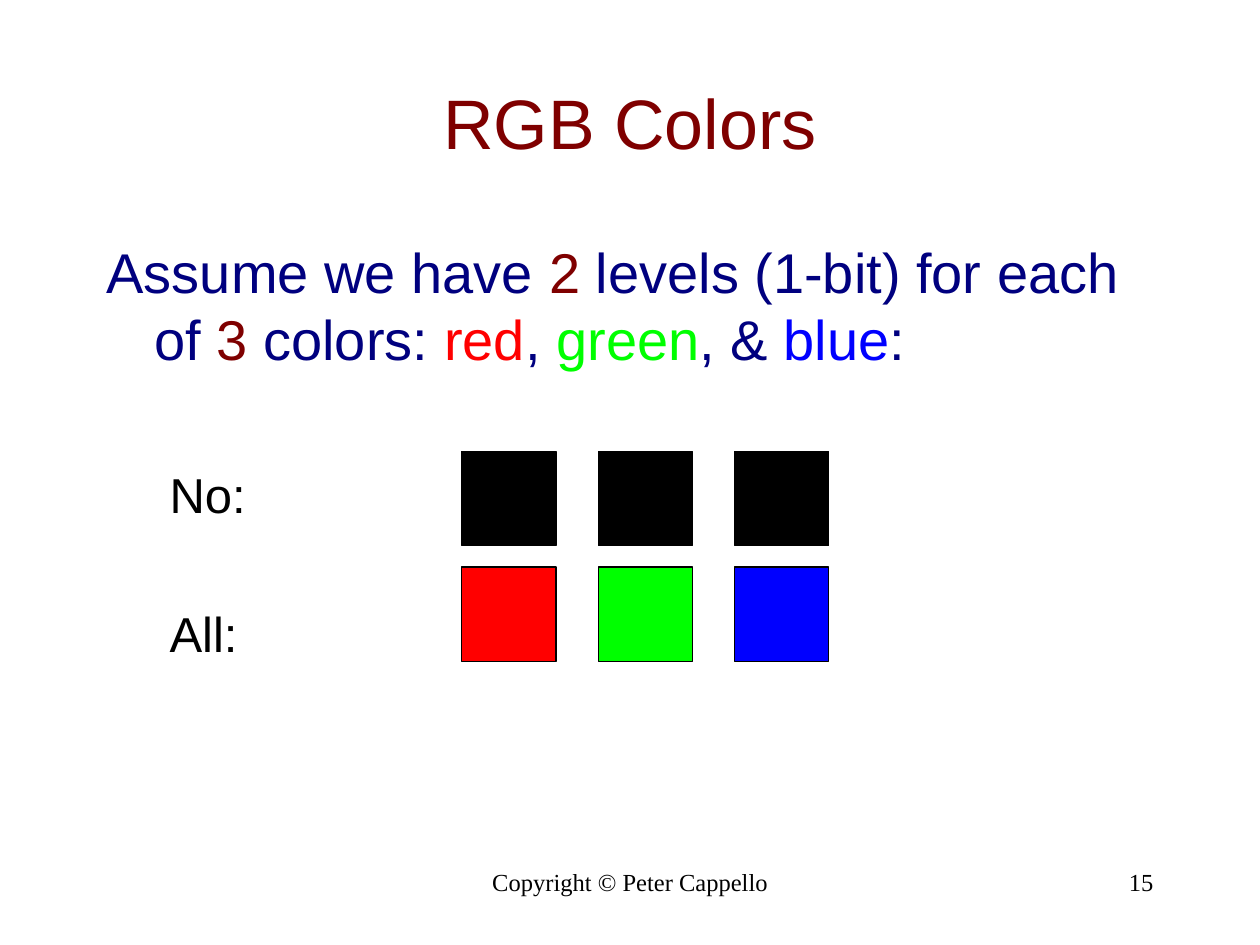
from pptx import Presentation
from pptx.dml.color import RGBColor
from pptx.enum.shapes import MSO_SHAPE
from pptx.enum.text import MSO_ANCHOR, PP_ALIGN
from pptx.util import Cm, Pt

RECT = MSO_SHAPE.RECTANGLE
TOP, MIDDLE = MSO_ANCHOR.TOP, MSO_ANCHOR.MIDDLE
LEFT, CENTER, RIGHT = PP_ALIGN.LEFT, PP_ALIGN.CENTER, PP_ALIGN.RIGHT
COLORS = {
    "black": "000000", "maroon": "7F0000", "navy": "00007F",
    "red": "FF0000", "green": "00FF00", "blue": "0000FF",
}
LEAD = [
    ("Assume we have ", "navy"), ("2", "maroon"),
    (" levels (1-bit) for each of ", "navy"), ("3", "maroon"),
    (" colors: ", "navy"), ("red", "red"), (", ", "navy"),
    ("green", "green"), (", & ", "navy"), ("blue", "blue"), (":", "navy"),
]


def color(name):
    """Return the named colour."""
    return RGBColor.from_string(COLORS[name])


def add_frame(slide, box, anchor=TOP):
    """Add a wrapping text box and return its frame."""
    frame = slide.shapes.add_textbox(*map(Cm, box)).text_frame
    frame.word_wrap = True
    frame.vertical_anchor = anchor
    return frame


def add_runs(para, parts, size, face="Arial"):
    """Fill a paragraph with coloured runs."""
    for text, name in parts:
        run = para.add_run()
        run.text = text
        run.font.size = Pt(size)
        run.font.name = face
        run.font.color.rgb = color(name)


def add_label(slide, box, part, size, align, face="Arial", anchor=TOP):
    """Add a single line of text."""
    para = add_frame(slide, box, anchor).paragraphs[0]
    para.alignment = align
    add_runs(para, [part], size, face)


def add_body(slide, box):
    """Add the lead sentence and the two row names."""
    frame = add_frame(slide, box)
    rows = [
        (LEAD, 32, 4, 0.96, -0.96),
        ([("No:", "black")], 28, 53, 2.06, -0.79),
        ([("All:", "black")], 28, 46, 2.06, -0.79),
    ]
    for i, (parts, size, gap, margin, indent) in enumerate(rows):
        para = frame.add_paragraph() if i else frame.paragraphs[0]
        para.alignment = LEFT
        para.space_before = Pt(gap)
        props = para._p.get_or_add_pPr()
        props.set("marL", str(Cm(margin)))
        props.set("indent", str(Cm(indent)))
        add_runs(para, parts, size)


def add_grid(slide, box):
    """Add a row of dark squares above a row of lit ones."""
    left, top, width, height = box
    side = 1.9
    rows = [["black"] * 3, ["red", "green", "blue"]]
    for i, row in enumerate(rows):
        for j, name in enumerate(row):
            x = left + j * (width - side) / 2
            y = top + i * (height - side)
            cell = slide.shapes.add_shape(RECT, *map(Cm, (x, y, side, side)))
            cell.shadow.inherit = False
            cell.fill.solid()
            cell.fill.fore_color.rgb = color(name)
            cell.line.color.rgb = color("black")
            cell.line.width = Pt(0.75)


def add_footer(slide, box):
    """Add the copyright line and the page number."""
    left, top, width, height = box
    face = "Times New Roman"
    add_label(slide, (left, top, 8.05, height),
              ("Copyright © Peter Cappello", "black"), 14, CENTER, face)
    add_label(slide, (left + width - 5.28, top, 5.28, height),
              ("15", "black"), 14, RIGHT, face)


def main():
    """Build and save the slide."""
    deck = Presentation()
    deck.slide_width, deck.slide_height = Cm(25.4), Cm(19.05)
    slide = deck.slides.add_slide(deck.slide_layouts[6])
    add_footer(slide, (8.68, 17.36, 14.82, 1.27))
    add_label(slide, (1.9, 0.85, 21.6, 3.18), ("RGB Colors", "maroon"),
              40, CENTER, anchor=MIDDLE)
    add_body(slide, (1.9, 4.66, 21.6, 12.28))
    add_grid(slide, (9.31, 9.1, 7.4, 4.23))
    deck.save("out.pptx")


if __name__ == "__main__":
    main()
